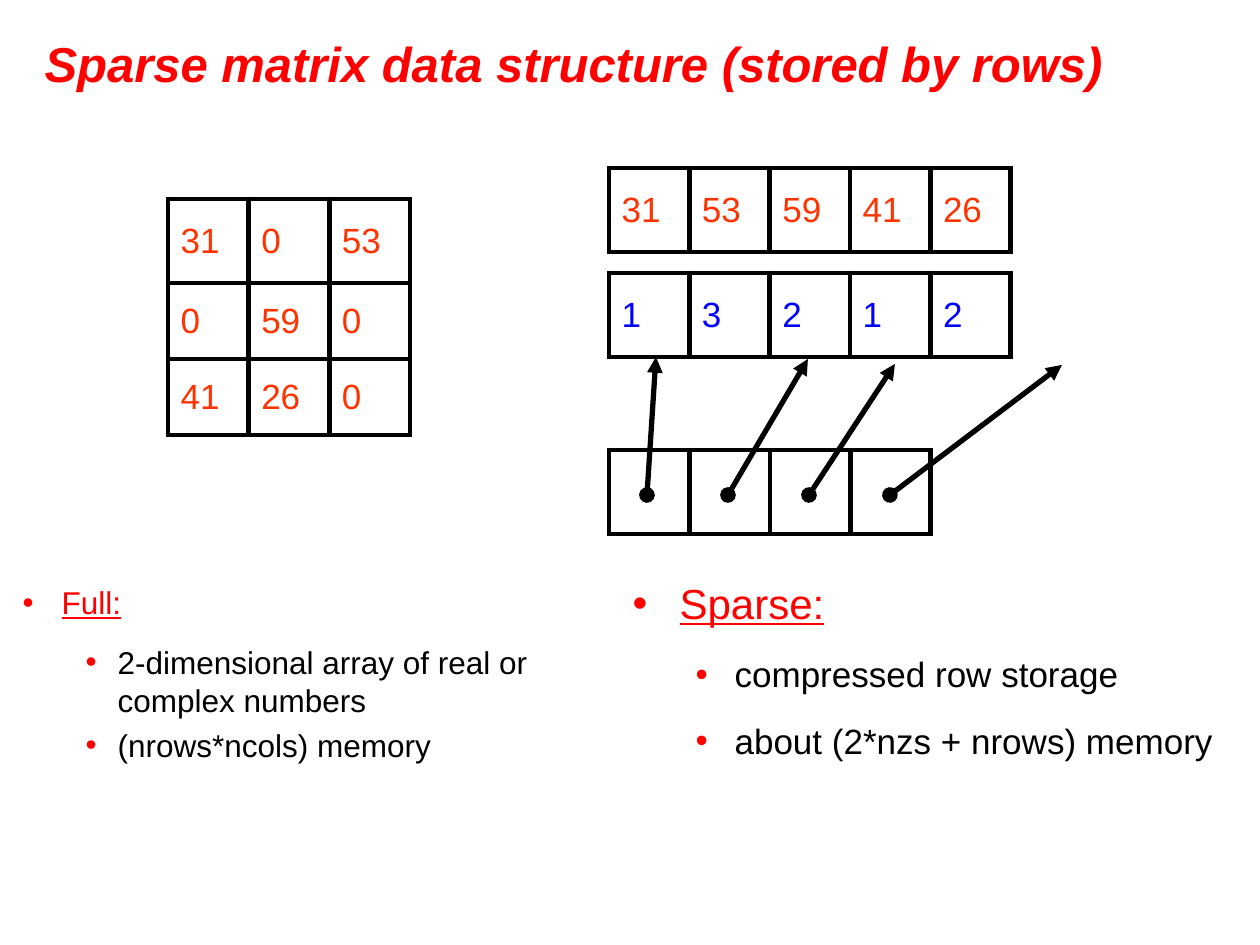
from dataclasses import dataclass

from lxml.etree import SubElement
from pptx import Presentation
from pptx.dml.color import RGBColor
from pptx.enum.shapes import MSO_CONNECTOR
from pptx.enum.text import MSO_ANCHOR, MSO_AUTO_SIZE, PP_ALIGN
from pptx.oxml.ns import qn
from pptx.util import Pt

PX = 914400 // 126


@dataclass(frozen=True)
class Theme:
    face: str = "Arial"
    red: str = "FF0000"
    orange: str = "FF3300"
    blue: str = "0000FF"
    black: str = "000000"
    title: int = 28
    cell: int = 20
    full: int = 18
    sparse_head: int = 24
    sparse_item: int = 20
    rule: int = 3


THEME = Theme()

TITLE = "Sparse matrix data structure (stored by rows)"
TITLE_BOX = (32, 23, 1176, 79)

# left, top, total width, row heights, text colour, rows
TABLES = [
    (168, 199, 242, (84, 76, 76), THEME.orange,
     [["31", "0", "53"], ["0", "59", "0"], ["41", "26", "0"]]),
    (609, 168, 402, (84,), THEME.orange, [["31", "53", "59", "41", "26"]]),
    (609, 273, 402, (84,), THEME.blue, [["1", "3", "2", "1", "2"]]),
    (609, 450, 322, (84,), THEME.black, [["", "", "", ""]]),
]

# box, line spacing, heading size, item size, levels and (margin, hang) of
# heading and items, heading, items with the points of space before each
LISTS = [
    ((-53, 577, 662, 272), 1.0, THEME.full, THEME.full,
     [(1, 102, 39), (2, 158, 32)], "Full:",
     [("2-dimensional array of real or complex numbers", 12.5),
      ("(nrows*ncols) memory", 4)]),
    ((620, 577, 640, 284), 0.9, THEME.sparse_head, THEME.sparse_item,
     [(0, 47, 47), (1, 102, 39)], "Sparse:",
     [("compressed row storage", 16.5),
      ("about (2*nzs + nrows) memory", 16.5)]),
]

POINTER_START = (647, 495)
POINTER_STEP = 81
POINTER_TIPS = [(656, 357), (808, 359), (895, 364), (1062, 365)]


def set_font(font, size, colour):
    font.name = THEME.face
    font.size = Pt(size)
    font.color.rgb = RGBColor.from_string(colour)


def place(shape, box):
    shape.left, shape.top, shape.width, shape.height = (v * PX for v in box)


def add_bullet(paragraph, margin, hang):
    props = paragraph._p.get_or_add_pPr()
    props.set("marL", str(margin * PX))
    props.set("indent", str(-hang * PX))
    colour = SubElement(props, qn("a:buClr"))
    SubElement(colour, qn("a:srgbClr"), val=THEME.red)
    SubElement(props, qn("a:buFont"), typeface=THEME.face)
    SubElement(props, qn("a:buChar"), char="•")


def fill_title(title):
    place(title, TITLE_BOX)
    frame = title.text_frame
    frame.auto_size = MSO_AUTO_SIZE.NONE
    frame.vertical_anchor = MSO_ANCHOR.MIDDLE
    frame.text = TITLE
    paragraph = frame.paragraphs[0]
    paragraph.alignment = PP_ALIGN.LEFT
    set_font(paragraph.font, THEME.title, THEME.red)
    paragraph.font.bold = paragraph.font.italic = True


def fill_list(body, box, spacing, head_size, item_size, levels, heading, items):
    place(body, box)
    frame = body.text_frame
    frame.auto_size = MSO_AUTO_SIZE.NONE
    frame.vertical_anchor = MSO_ANCHOR.TOP
    entries = [(heading, 4)] + items
    frame.text = "\n".join(text for text, _ in entries)
    for index, paragraph in enumerate(frame.paragraphs):
        is_heading = index == 0
        level, margin, hang = levels[0 if is_heading else 1]
        paragraph.level = level
        paragraph.line_spacing = spacing
        paragraph.space_before = Pt(entries[index][1])
        add_bullet(paragraph, margin, hang)
        set_font(paragraph.font, head_size if is_heading else item_size,
                 THEME.red if is_heading else THEME.black)
        paragraph.font.underline = is_heading


def add_border(cell):
    props = cell._tc.get_or_add_tcPr()
    for index, side in enumerate(("lnL", "lnR", "lnT", "lnB")):
        line = props.makeelement(qn(f"a:{side}"), {"w": str(Pt(THEME.rule))})
        SubElement(SubElement(line, qn("a:solidFill")), qn("a:srgbClr"),
                   val=THEME.black)
        props.insert(index, line)


def add_array(slide, left, top, width, heights, colour, rows):
    columns = len(rows[0])
    table = slide.shapes.add_table(
        len(rows), columns, left * PX, top * PX, width * PX,
        sum(heights) * PX).table
    table.first_row = table.horz_banding = False
    for column in table.columns:
        column.width = width * PX // columns
    for row, height, values in zip(table.rows, heights, rows):
        row.height = height * PX
        for cell, value in zip(row.cells, values):
            cell.text = value
            cell.vertical_anchor = MSO_ANCHOR.MIDDLE
            cell.fill.background()
            add_border(cell)
            set_font(cell.text_frame.paragraphs[0].font, THEME.cell, colour)


def add_pointer(slide, start, tip):
    pointer = slide.shapes.add_connector(
        MSO_CONNECTOR.STRAIGHT, *(v * PX for v in start + tip))
    pointer.line.width = Pt(THEME.rule)
    pointer.line.color.rgb = RGBColor.from_string(THEME.black)
    line = pointer.line._get_or_add_ln()
    SubElement(line, qn("a:headEnd"), type="oval")
    SubElement(line, qn("a:tailEnd"), type="triangle")
    SubElement(pointer._element.spPr, qn("a:effectLst"))


def main():
    deck = Presentation()
    deck.slide_width, deck.slide_height = 1260 * PX, 945 * PX
    two_content = deck.slide_layouts[3]
    slide = deck.slides.add_slide(two_content)
    title, *bodies = slide.placeholders
    fill_title(title)
    for body, content in zip(bodies, LISTS):
        fill_list(body, *content)
    for array in TABLES:
        add_array(slide, *array)
    x, y = POINTER_START
    for index, tip in enumerate(POINTER_TIPS):
        add_pointer(slide, (x + index * POINTER_STEP, y), tip)
    deck.save("out.pptx")


if __name__ == "__main__":
    main()
